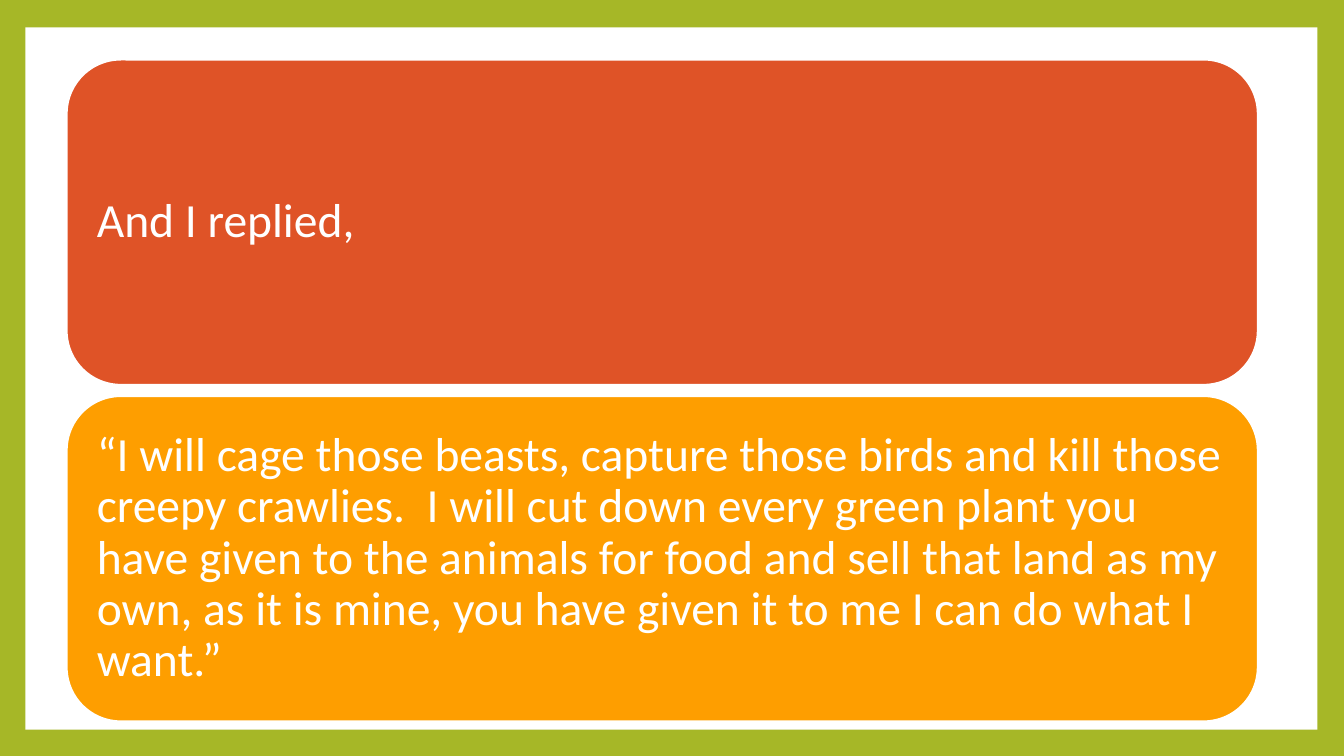
from pptx import Presentation
from pptx.dml.color import RGBColor
from pptx.enum import shapes, text
from pptx.util import Cm, Pt

SPEECHES = [
    ("And I replied,", "DF5327"),
    ("“I will cage those beasts, capture those birds and kill those creepy "
     "crawlies.  I will cut down every green plant you have given to the "
     "animals for food and sell that land as my own, as it is mine, you have "
     "given it to me I can do what I want.”", "FE9E00"),
]
BORDER, PAPER = "A6B727", "FFFFFF"
CARD_LEFT, CARD_TOP, CARD_WIDTH, CARD_HEIGHT = 1.68, 1.5, 30.02, 8.2
CARD_GAP = 0.28
INSET = Cm(0.36)


def paint(color_format, hex_color):
    color_format.rgb = RGBColor.from_string(hex_color)


def add_panel(slide, preset, left, top, width, height, fill):
    panel = slide.shapes.add_shape(
        preset, Cm(left), Cm(top), Cm(width), Cm(height))
    panel.shadow.inherit = False
    panel.fill.solid()
    paint(panel.fill.fore_color, fill)
    panel.line.fill.background()
    return panel


def add_card(slide, top, speech, fill):
    card = add_panel(slide, shapes.MSO_SHAPE.ROUNDED_RECTANGLE,
                     CARD_LEFT, top, CARD_WIDTH, CARD_HEIGHT, fill)
    paint(card.line.color, PAPER)
    card.line.width = Pt(1.5)

    frame = card.text_frame
    frame.text = speech
    frame.word_wrap = True
    frame.vertical_anchor = text.MSO_ANCHOR.MIDDLE
    frame.margin_left = frame.margin_right = INSET
    frame.margin_top = frame.margin_bottom = INSET

    paragraph = frame.paragraphs[0]
    paragraph.alignment = text.PP_ALIGN.LEFT
    paragraph.line_spacing = 0.9
    font = paragraph.runs[0].font
    font.name = "Calibri"
    font.size = Pt(34)
    paint(font.color, PAPER)


def main():
    deck = Presentation()
    deck.slide_width, deck.slide_height = Cm(33.87), Cm(19.05)
    slide = deck.slides.add_slide(deck.slide_layouts[6])
    slide.background.fill.solid()
    paint(slide.background.fill.fore_color, BORDER)

    add_panel(slide, shapes.MSO_SHAPE.RECTANGLE,
              0.64, 0.69, 32.56, 17.7, PAPER)
    for row, (speech, fill) in enumerate(SPEECHES):
        add_card(slide, CARD_TOP + row * (CARD_HEIGHT + CARD_GAP), speech, fill)

    deck.save("out.pptx")


if __name__ == "__main__":
    main()
